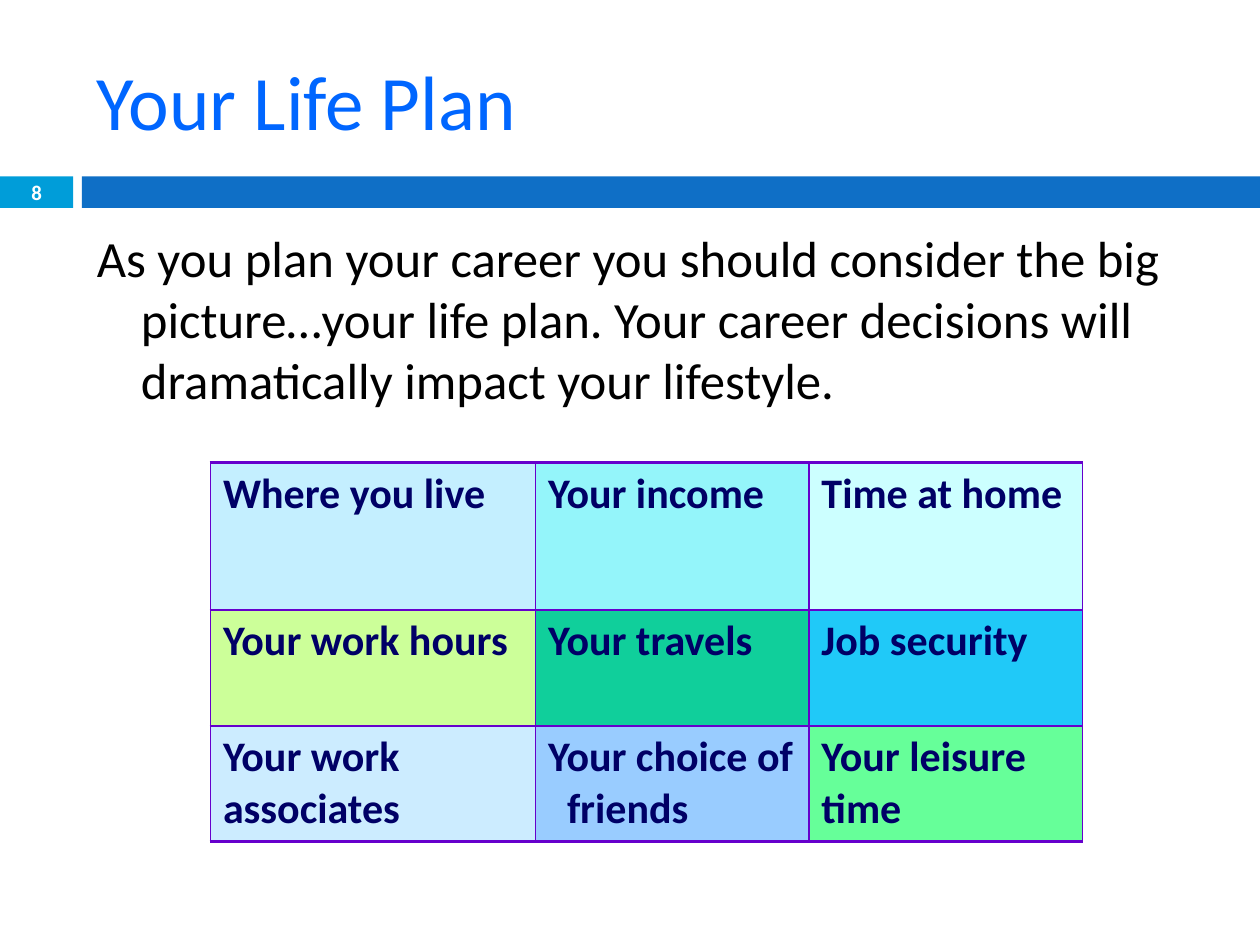
import pptx
import pptx.dml.color
import pptx.enum.shapes
import pptx.enum.text
import pptx.oxml
import pptx.oxml.ns
import pptx.util
from dataclasses import dataclass

Inches = pptx.util.Inches
Pt = pptx.util.Pt
ALIGN = pptx.enum.text.PP_ALIGN
ANCHOR = pptx.enum.text.MSO_ANCHOR


@dataclass(frozen=True)
class Theme:
    font: str = "Calibri"
    title: str = "0066FF"
    body: str = "000000"
    cell_text: str = "000066"
    border: str = "6600CC"
    number: str = "FFFFFF"
    number_bar: str = "009DD9"
    wide_bar: str = "0F6FC6"
    title_size: float = 44
    body_size: float = 29
    cell_size: float = 24
    number_size: float = 11.9


THEME = Theme()
COL_WIDTHS = [2.58, 2.17, 2.17]
ROW_HEIGHTS = [1.17, 0.92, 0.92]
BORDERS = {"L": 1, "R": 1, "T": 1.5, "B": 1.5}
LIFESTYLE = [
    [("Where you live", "C4EFFF"), ("Your income", "94F5FA"), ("Time at home", "CCFFFF")],
    [("Your work hours", "CCFF99"), ("Your travels", "10CF9B"), ("Job security", "20C9F8")],
    [("Your work associates", "CCECFF"), ("Your choice of friends", "99CCFF"),
     ("Your leisure time", "66FF99")],
]


def rgb(color):
    return pptx.dml.color.RGBColor.from_string(color)


def style(p, size, color, bold=False):
    p.font.name = THEME.font
    p.font.size = Pt(size)
    p.font.color.rgb = rgb(color)
    p.font.bold = bold


def hang(p, indent):
    """Indent every line of the paragraph but the first."""
    pPr = p._p.get_or_add_pPr()
    pPr.set("marL", str(Inches(indent)))
    pPr.set("indent", str(-Inches(indent)))


def add_bar(slide, left, width, color):
    sp = slide.shapes.add_shape(pptx.enum.shapes.MSO_SHAPE.RECTANGLE,
                                Inches(left), Inches(1.4), Inches(width), Inches(0.25))
    sp.shadow.inherit = False
    sp.fill.solid()
    sp.fill.fore_color.rgb = rgb(color)
    sp.line.fill.background()


def add_text(slide, box, text, size, color, anchor=ANCHOR.TOP, bold=False):
    tf = slide.shapes.add_textbox(*map(Inches, box)).text_frame
    tf.word_wrap = True
    tf.vertical_anchor = anchor
    p = tf.paragraphs[0]
    p.text = text
    style(p, size, color, bold)
    return tf


def add_borders(cell):
    tcPr = cell._tc.get_or_add_tcPr()
    for i, (side, width) in enumerate(BORDERS.items()):
        tcPr.insert(i, pptx.oxml.parse_xml(
            f'<a:ln{side} {pptx.oxml.ns.nsdecls("a")} w="{Pt(width)}">'
            f'<a:solidFill><a:srgbClr val="{THEME.border}"/></a:solidFill></a:ln{side}>'))


def add_lifestyle_table(slide):
    table = slide.shapes.add_table(
        len(ROW_HEIGHTS), len(COL_WIDTHS), Inches(1.67), Inches(3.67),
        Inches(sum(COL_WIDTHS)), Inches(sum(ROW_HEIGHTS))).table
    table.first_row = table.horz_banding = False
    for col, width in zip(table.columns, COL_WIDTHS):
        col.width = Inches(width)
    for row, height, entries in zip(table.rows, ROW_HEIGHTS, LIFESTYLE):
        row.height = Inches(height)
        for cell, (text, fill) in zip(row.cells, entries):
            cell.text = text
            style(cell.text_frame.paragraphs[0], THEME.cell_size, THEME.cell_text, True)
            cell.fill.solid()
            cell.fill.fore_color.rgb = rgb(fill)
            add_borders(cell)
    hang(table.cell(2, 1).text_frame.paragraphs[0], 0.15)


def main():
    prs = pptx.Presentation()
    prs.slide_width, prs.slide_height = Inches(10), Inches(7.5)
    slide = prs.slides.add_slide(prs.slide_layouts[6])

    add_bar(slide, 0, 0.58, THEME.number_bar)
    add_bar(slide, 0.65, 9.35, THEME.wide_bar)
    add_text(slide, (0.67, 0.25, 8.92, 1.08), "Your Life Plan",
             THEME.title_size, THEME.title, ANCHOR.MIDDLE)

    body = add_text(slide, (0.67, 1.75, 8.92, 1.67),
                    "As you plan your career you should consider the big picture…your life plan. "
                    "Your career decisions will dramatically impact your lifestyle.",
                    THEME.body_size, THEME.body)
    body.paragraphs[0].space_before = Pt(7)
    hang(body.paragraphs[0], 0.35)

    add_lifestyle_table(slide)

    number = add_text(slide, (0, 1.39, 0.58, 0.27), "8",
                      THEME.number_size, THEME.number, ANCHOR.MIDDLE, True)
    number.margin_top = number.margin_bottom = 0
    number.paragraphs[0].alignment = ALIGN.CENTER

    prs.save("out.pptx")


if __name__ == "__main__":
    main()
